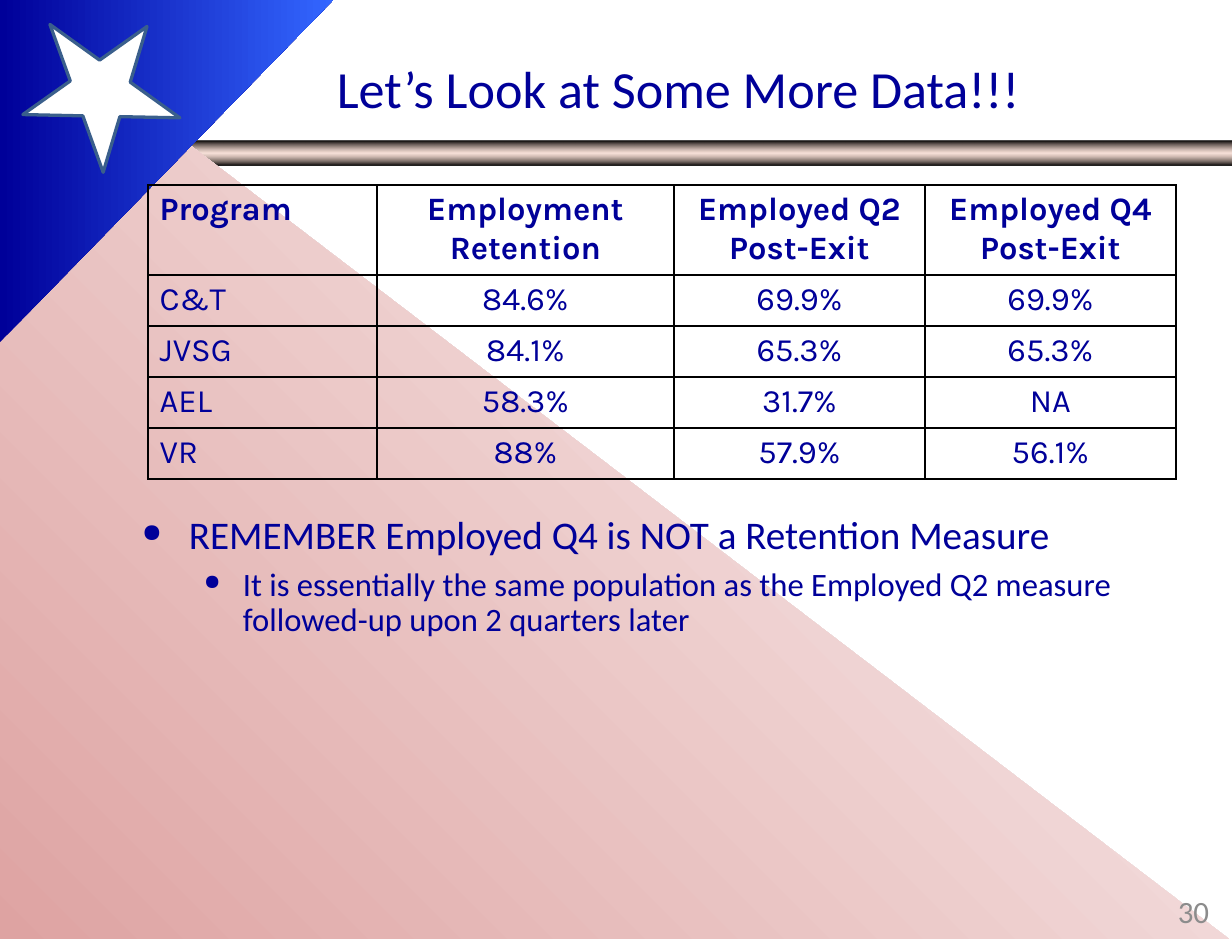
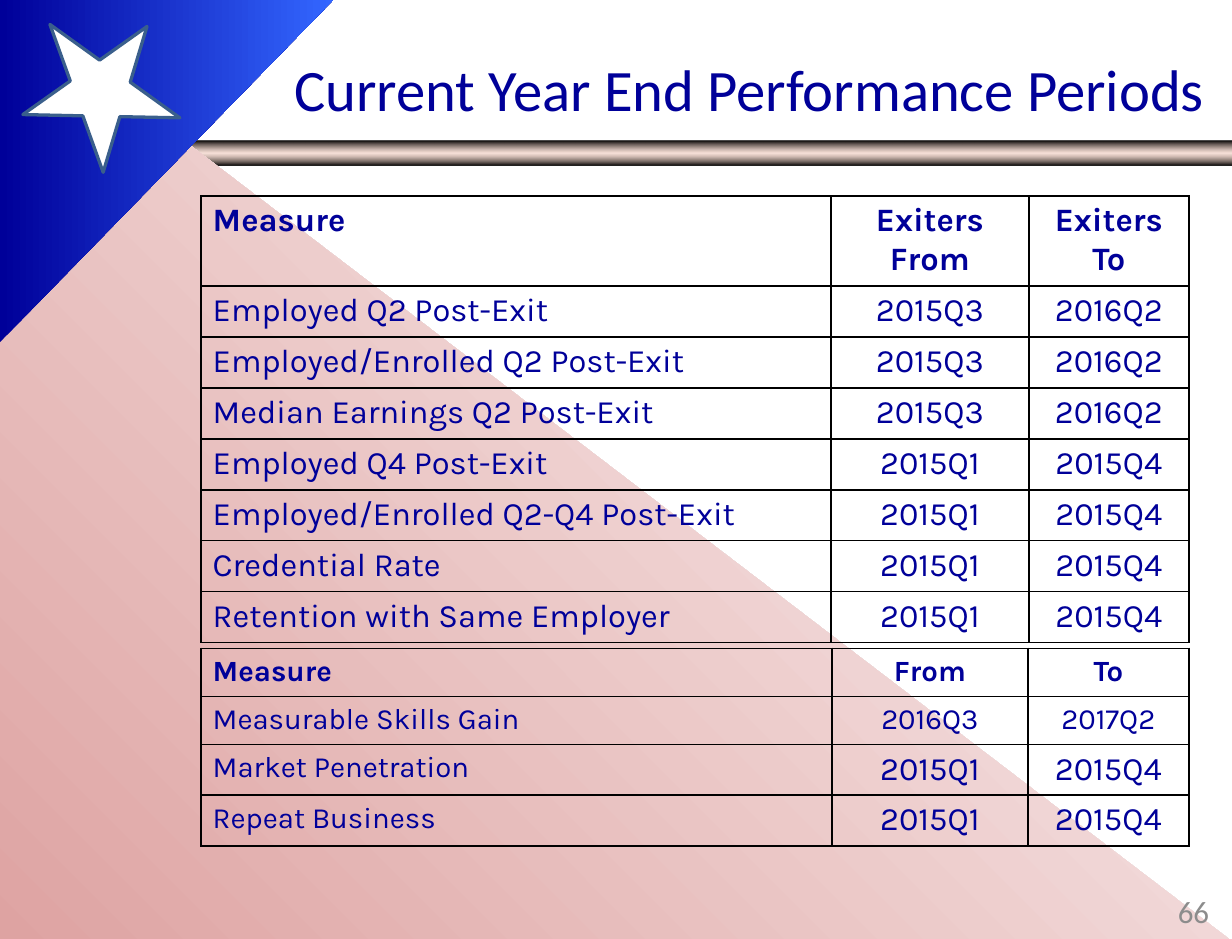
from lxml.etree import SubElement
from pptx import Presentation
from pptx.dml.color import RGBColor
from pptx.enum.shapes import MSO_SHAPE
from pptx.enum.text import MSO_ANCHOR, PP_ALIGN
from pptx.oxml.ns import qn
from pptx.util import Inches, Pt

PX = 7793  # EMU per px
COLORS = {
    "white": "FFFFFF", "black": "000000", "navy": "000099", "blue": "3366FF",
    "rose": "DEA3A2", "copper": "EFC1AF", "star_edge": "3A5F8C", "number": "8C8C8C",
}
HEADING_FONT, TABLE_FONT = "Calibri", "Karla"

SLIDES = [
    {
        "title": "Let’s Look at Some More Data!!!",
        "title_box": (134, 36, 1089, 104), "title_size": 32, "number": "30",
        "bullets": [
            {"text": "REMEMBER Employed Q4 is NOT a Retention Measure",
             "size": 24, "level": 0, "indent": (77, -47)},
            {"text": "It is essentially the same population as the Employed Q2 "
                     "measure followed-up upon 2 quarters later",
             "size": 20, "level": 1, "indent": (131, -39)},
        ],
        "tables": [{
            "corner": (148, 185), "columns": (229, 297, 251, 251),
            "header_height": 88, "label_size": 20, "value_sizes": [20] * 5,
            "rows": [
                ("Program", "Employment Retention", "Employed Q2\nPost-Exit",
                 "Employed Q4\nPost-Exit"),
                ("C&T", "84.6%", "69.9%", "69.9%"),
                ("JVSG", "84.1%", "65.3%", "65.3%"),
                ("AEL", "58.3%", "31.7%", "NA"),
                ("VR", "88%", "57.9%", "56.1%"),
            ],
        }],
    },
    {
        "title": "Current Year End Performance Periods",
        "title_box": (278, 36, 943, 104), "title_size": 36, "number": "66",
        "bullets": [],
        "tables": [
            {
                "corner": (201, 196), "columns": (630, 198, 160),
                "header_height": 88, "label_size": 20, "value_sizes": [20] * 8,
                "rows": [
                    ("Measure", "Exiters From", "Exiters To"),
                    ("Employed Q2 Post-Exit", "2015Q3", "2016Q2"),
                    ("Employed/Enrolled Q2 Post-Exit", "2015Q3", "2016Q2"),
                    ("Median Earnings Q2 Post-Exit", "2015Q3", "2016Q2"),
                    ("Employed Q4 Post-Exit", "2015Q1", "2015Q4"),
                    ("Employed/Enrolled Q2-Q4 Post-Exit", "2015Q1", "2015Q4"),
                    ("Credential Rate", "2015Q1", "2015Q4"),
                    ("Retention with Same Employer", "2015Q1", "2015Q4"),
                ],
            },
            {
                "corner": (201, 648), "columns": (631, 196, 161),
                "header_height": 48, "label_size": 18,
                "value_sizes": [18, 18, 20, 20],
                "rows": [
                    ("Measure", "From", "To"),
                    ("Measurable Skills Gain", "2016Q3", "2017Q2"),
                    ("Market Penetration", "2015Q1", "2015Q4"),
                    ("Repeat Business", "2015Q1", "2015Q4"),
                ],
            },
        ],
    },
]
ROW_HEIGHTS = {18: 48, 20: 50}  # by text size
BULLET_BOX = (99, 510, 1100, 151)
NUMBER_BOX = (935, 886, 287, 50)
BAR_BOX = (0, 141, 1232, 24)
STAR_BOX = (25, 13, 160, 144)
ROSE_CORNERS = [(0, 0), (1232, 941), (0, 941)]
BLUE_CORNERS = [(0, 0), (333, 0), (0, 342)]


def rgb(name):
    return RGBColor.from_string(COLORS[name])


def emu(box):
    return [length * PX for length in box]


def write(frame, text, *, size, font=HEADING_FONT, color="navy", bold=False,
          align=PP_ALIGN.LEFT, level=0, indent=None):
    """Add one paragraph per line of text; an indent also brings a bullet."""
    for line in text.split("\n"):
        first = frame.paragraphs[0]
        paragraph = frame.add_paragraph() if first.runs else first
        paragraph.alignment, paragraph.level = align, level
        run = paragraph.add_run()
        run.text = line
        run.font.size, run.font.name, run.font.bold = Pt(size), font, bold
        run.font.color.rgb = rgb(color)
        if indent:
            paragraph.line_spacing = 0.9
            paragraph.space_before = paragraph.space_after = Pt(3)
            props = paragraph._p.get_or_add_pPr()
            props.set("marL", str(indent[0] * PX))
            props.set("indent", str(indent[1] * PX))
            SubElement(props, qn("a:buSzPct"), val="65000")
            SubElement(props, qn("a:buChar"), char="●")


def add_text_frame(slide, box, anchor=MSO_ANCHOR.MIDDLE):
    frame = slide.shapes.add_textbox(*emu(box)).text_frame
    frame.word_wrap, frame.vertical_anchor = True, anchor
    frame.margin_left = frame.margin_right = Inches(0.11)
    frame.margin_top = frame.margin_bottom = Inches(0.05)
    return frame


def paint_gradient(shape, stops, angle):
    """Fill with (position %, colour, opacity %) stops, angle clockwise."""
    shape.shadow.inherit = False
    shape.line.fill.background()
    shape.fill.background()
    properties = shape.element.spPr
    no_fill = properties.find(qn("a:noFill"))
    gradient = SubElement(properties, qn("a:gradFill"), rotWithShape="1")
    properties.replace(no_fill, gradient)
    stop_list = SubElement(gradient, qn("a:gsLst"))
    for position, color, opacity in stops:
        stop = SubElement(stop_list, qn("a:gs"), pos=str(position * 1000))
        value = SubElement(stop, qn("a:srgbClr"), val=COLORS[color])
        if opacity < 100:
            SubElement(value, qn("a:alpha"), val=str(opacity * 1000))
    SubElement(gradient, qn("a:lin"), ang=str(angle * 60000), scaled="0")


def add_triangle(slide, corners, start, end, angle):
    builder = slide.shapes.build_freeform(*corners[0], scale=PX)
    builder.add_line_segments(corners[1:], close=True)
    paint_gradient(builder.convert_to_shape(),
                   [(0, start, 100), (100, end, 100)], angle)


def add_backdrop(slide):
    bar = slide.shapes.add_shape(MSO_SHAPE.ROUNDED_RECTANGLE, *emu(BAR_BOX))
    bar.adjustments[0] = 0
    paint_gradient(bar, [(0, "black", 100), (50, "copper", 47),
                         (100, "black", 100)], 90)
    add_triangle(slide, ROSE_CORNERS, "white", "rose", 135)
    add_triangle(slide, BLUE_CORNERS, "navy", "blue", 0)
    star = slide.shapes.add_shape(MSO_SHAPE.STAR_5_POINT, *emu(STAR_BOX))
    star.rotation = 35.7
    star.shadow.inherit = False
    star.fill.solid()
    star.fill.fore_color.rgb = rgb("white")
    star.line.color.rgb = rgb("star_edge")
    star.line.width = Pt(2)


def outline_cell(cell):
    cell.fill.background()
    properties = cell._tc.get_or_add_tcPr()
    for place, side in enumerate(("lnL", "lnR", "lnT", "lnB")):
        border = SubElement(properties, qn(f"a:{side}"), w=str(Pt(1)))
        fill = SubElement(border, qn("a:solidFill"))
        SubElement(fill, qn("a:srgbClr"), val=COLORS["black"])
        properties.insert(place, border)


def add_data_table(slide, data):
    rows, columns = data["rows"], data["columns"]
    heights = [data["header_height"]]
    heights += [ROW_HEIGHTS[size] for size in data["value_sizes"][1:]]
    box = (*data["corner"], sum(columns), sum(heights))
    table = slide.shapes.add_table(len(rows), len(columns), *emu(box)).table
    table.first_row = table.horz_banding = False
    for column, width in zip(table.columns, columns):
        column.width = width * PX
    for r, (row, height) in enumerate(zip(rows, heights)):
        table.rows[r].height = height * PX
        for c, text in enumerate(row):
            cell = table.cell(r, c)
            outline_cell(cell)
            write(cell.text_frame, text, font=TABLE_FONT, bold=r == 0,
                  size=data["value_sizes"][r] if c else data["label_size"],
                  align=PP_ALIGN.CENTER if c else PP_ALIGN.LEFT)


def build_slide(deck, content):
    slide = deck.slides.add_slide(deck.slide_layouts[6])
    add_backdrop(slide)
    write(add_text_frame(slide, content["title_box"]), content["title"],
          size=content["title_size"], align=PP_ALIGN.CENTER)
    if content["bullets"]:
        body = add_text_frame(slide, BULLET_BOX, MSO_ANCHOR.TOP)
        for bullet in content["bullets"]:
            write(body, **bullet)
    write(add_text_frame(slide, NUMBER_BOX), content["number"], size=19,
          color="number", align=PP_ALIGN.RIGHT)
    for data in content["tables"]:
        add_data_table(slide, data)


def main():
    deck = Presentation()
    deck.slide_width, deck.slide_height = Inches(10.5), Inches(8)
    for content in SLIDES:
        build_slide(deck, content)
    deck.save("out.pptx")


if __name__ == "__main__":
    main()
